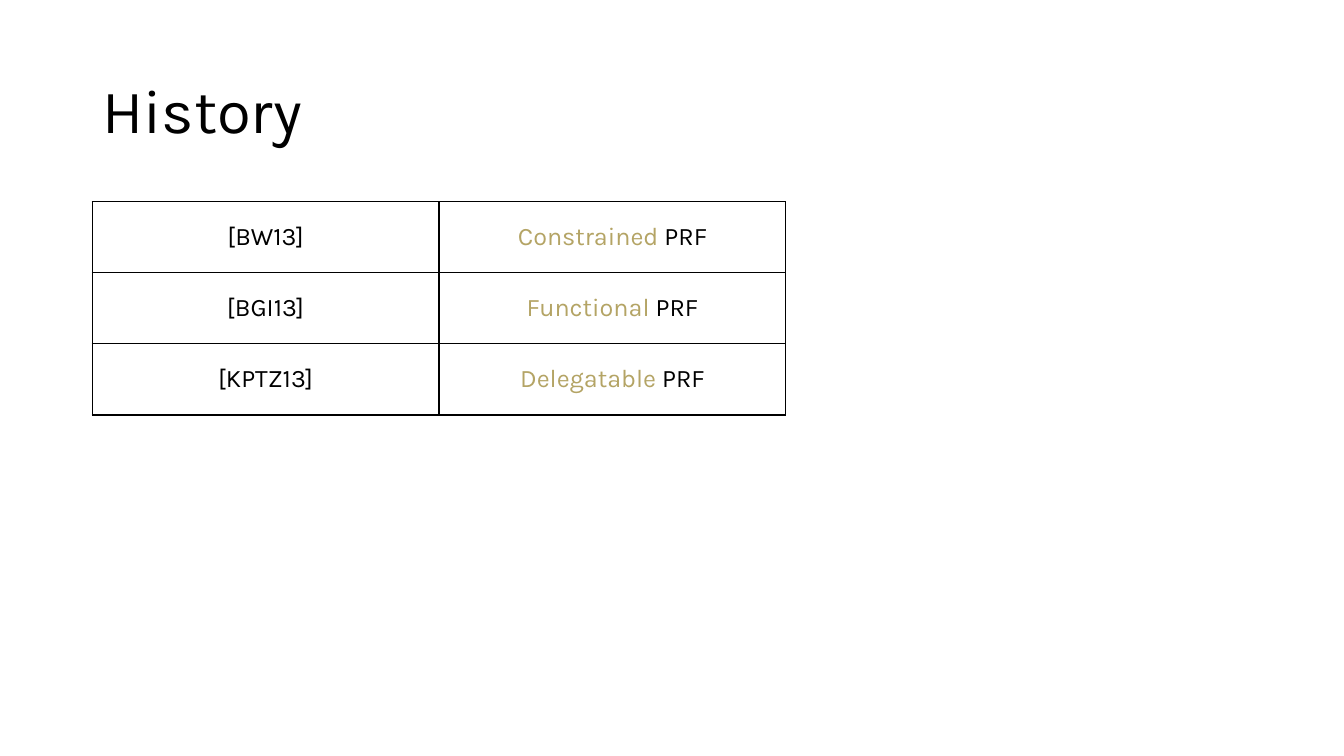
from lxml.etree import SubElement
from pptx import Presentation
from pptx.dml.color import RGBColor
from pptx.enum.text import MSO_ANCHOR as Anchor, PP_ALIGN as Align
from pptx.oxml.ns import qn
from pptx.util import Pt

TITLE = "History"
ROWS = [
    ("[BW13]", "Constrained", " PRF"),
    ("[BGI13]", "Functional", " PRF"),
    ("[KPTZ13]", "Delegatable", " PRF"),
]
FONT, BLACK, GOLD = "Karla", "000000", "B4A465"
TABLE_LEFT, TABLE_TOP, COL_W, ROW_H = 65.8, 144, 247.8, 50.8


def color(hex_value):
    return RGBColor.from_string(hex_value)


def write(tf, runs, size, align):
    p = tf.paragraphs[0]
    p.alignment = align
    p.font.name, p.font.size = FONT, Pt(size)
    for text, hex_value in runs:
        r = p.add_run()
        r.text = text
        r.font.color.rgb = color(hex_value)
    return p


def add_borders(cell):
    tc_pr = cell._tc.get_or_add_tcPr()
    for side in ("lnL", "lnR", "lnT", "lnB"):
        ln = SubElement(tc_pr, qn(f"a:{side}"), w=str(Pt(1)))
        fill = SubElement(ln, qn("a:solidFill"))
        SubElement(fill, qn("a:srgbClr"), val=BLACK)


prs = Presentation()
prs.slide_width, prs.slide_height = Pt(960), Pt(540)
s = prs.slides.add_slide(prs.slide_layouts[6])

title = s.shapes.add_textbox(Pt(66), Pt(28.75), Pt(828), Pt(104.4))
tf = title.text_frame
tf.word_wrap = True
tf.vertical_anchor = Anchor.MIDDLE
write(tf, [(TITLE, BLACK)], 44, Align.LEFT).line_spacing = 0.9

frame = s.shapes.add_table(len(ROWS), 2, Pt(TABLE_LEFT), Pt(TABLE_TOP),
                           Pt(2 * COL_W), Pt(len(ROWS) * ROW_H))
table = frame.table
table.first_row = table.horz_banding = False
for column in table.columns:
    column.width = Pt(COL_W)
for row, (citation, kind, noun) in zip(table.rows, ROWS):
    row.height = Pt(ROW_H)
    contents = [[(citation, BLACK)], [(kind, GOLD), (noun, BLACK)]]
    for cell, runs in zip(row.cells, contents):
        cell.vertical_anchor = Anchor.MIDDLE
        write(cell.text_frame, runs, 18, Align.CENTER)
        add_borders(cell)
        cell.fill.background()

prs.save("out.pptx")
